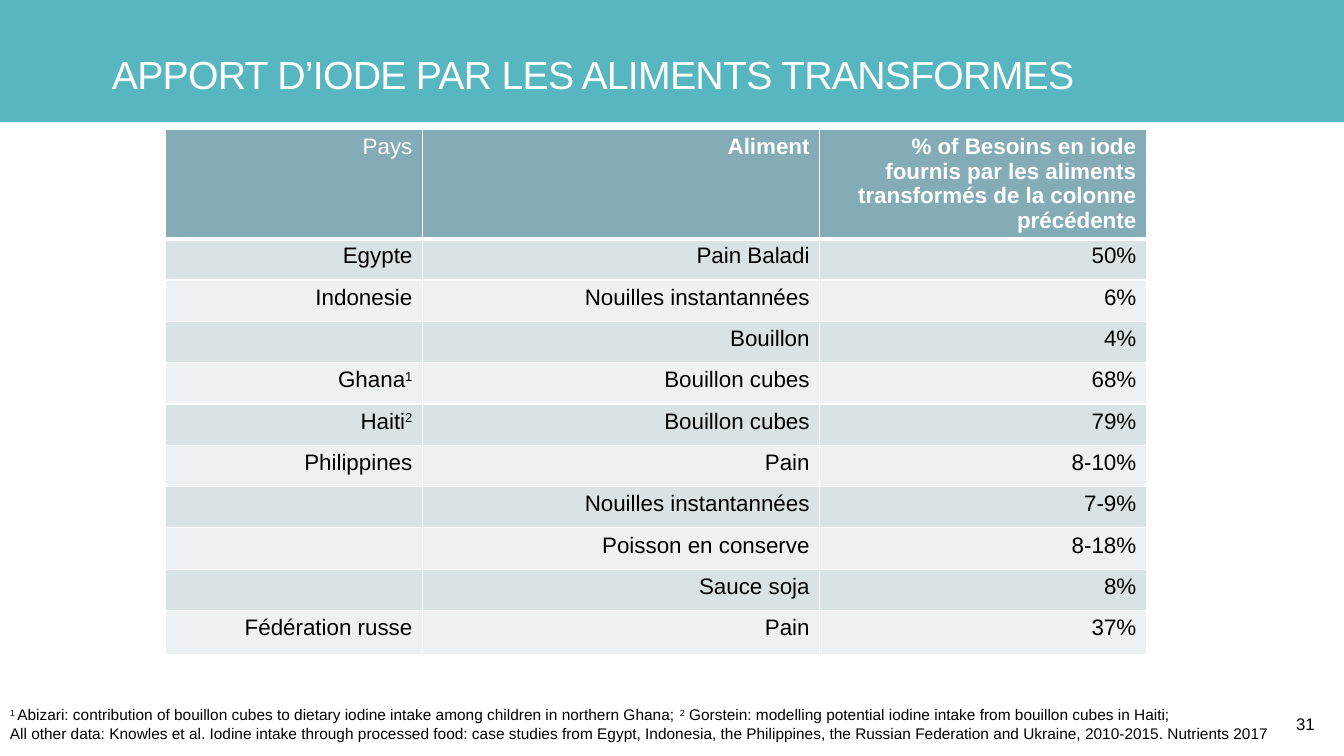
from lxml.etree import SubElement
from pptx import Presentation
from pptx.dml.color import RGBColor
from pptx.enum.shapes import MSO_SHAPE as Preset
from pptx.enum.text import MSO_ANCHOR as Anchor, PP_ALIGN as Align
from pptx.oxml.ns import qn
from pptx.util import Pt

PX = 9144  # EMU per px, 100 px to the inch
SLIDE_SIZE = (1333, 750)
FONT = "Arial"

WHITE = RGBColor(0xFF, 0xFF, 0xFF)
BLACK = RGBColor(0x00, 0x00, 0x00)
TEAL = RGBColor(0x58, 0xB6, 0xC0)
HEADER_FILL = RGBColor(0x84, 0xAC, 0xB6)
BAND_FILLS = (RGBColor(0xD9, 0xE3, 0xE5), RGBColor(0xED, 0xF1, 0xF3))

COLUMN_WIDTHS = (255, 394, 324)
HEADER_HEIGHT, ROW_HEIGHT, LAST_HEIGHT = 83, 41, 44

# Text between two ^ marks is superscript
ROWS = [
    ("Pays", "Aliment", "% of Besoins en iode fournis par les aliments "
     "transformés de la colonne précédente"),
    ("Egypte", "Pain Baladi", "50%"),
    ("Indonesie", "Nouilles instantannées", "6%"),
    ("", "Bouillon", "4%"),
    ("Ghana^1^", "Bouillon cubes", "68%"),
    ("Haiti^2^", "Bouillon cubes", "79%"),
    ("Philippines", "Pain", "8-10%"),
    ("", "Nouilles instantannées", "7-9%"),
    ("", "Poisson en conserve", "8-18%"),
    ("", "Sauce soja", "8%"),
    ("Fédération russe", "Pain", "37%"),
]
SOURCES = [
    "^1 ^Abizari: contribution of bouillon cubes to dietary iodine intake among "
    "children in northern Ghana; ^2^ Gorstein: modelling potential iodine intake "
    "from bouillon cubes in Haiti;",
    "All other data: Knowles et al. Iodine intake through processed food: case "
    "studies from Egypt, Indonesia, the Philippines, the Russian Federation and "
    "Ukraine, 2010-2015. Nutrients 2017",
]


def emu(*lengths):
    return [length * PX for length in lengths]


def write_text(frame, lines, size, color=BLACK, bold=False, align=Align.LEFT,
               spacing=None):
    for index, line in enumerate(lines):
        paragraph = frame.add_paragraph() if index else frame.paragraphs[0]
        paragraph.alignment = align
        for part, text in enumerate(line.split("^")):
            if not text:
                continue
            run = paragraph.add_run()
            run.text = text
            run.font.name = FONT
            run.font.size = Pt(size)
            run.font.bold = bold
            run.font.color.rgb = color
            properties = run._r.get_or_add_rPr()
            if part % 2:
                properties.set("baseline", "30000")
            if spacing is not None:
                properties.set("spc", str(round(spacing * 100)))


def set_margins(frame, margin):
    frame.margin_left = frame.margin_right = margin * PX
    frame.margin_top = frame.margin_bottom = margin * PX


def set_borders(cell, bottom_width):
    properties = cell._tc.get_or_add_tcPr()
    for side, width in (("L", 1), ("R", 1), ("T", 1), ("B", bottom_width)):
        line = SubElement(properties, qn(f"a:ln{side}"), w=str(Pt(width)))
        fill = SubElement(line, qn("a:solidFill"))
        SubElement(fill, qn("a:srgbClr"), val=str(WHITE))


def add_title_band(slide, left, top, width, height):
    band = slide.shapes.add_shape(Preset.RECTANGLE, *emu(left, top, width, height))
    band.shadow.inherit = False
    band.fill.solid()
    band.fill.fore_color.rgb = TEAL
    band.line.fill.background()

    # The title lies over the band
    title = slide.shapes.title
    slide.shapes._spTree.append(title._element)
    title.left, title.top, title.width, title.height = emu(
        left + 111, top + 6, 1102, 91)
    frame = title.text_frame
    set_margins(frame, 0)
    frame.word_wrap = True
    frame.vertical_anchor = Anchor.BOTTOM
    write_text(frame, ["APPORT D’IODE PAR LES ALIMENTS TRANSFORMES"], 28,
               color=WHITE, spacing=-0.5)


def add_food_table(slide, left, top):
    heights = [HEADER_HEIGHT] + [ROW_HEIGHT] * (len(ROWS) - 2) + [LAST_HEIGHT]
    table = slide.shapes.add_table(
        len(ROWS), len(COLUMN_WIDTHS),
        *emu(left, top, sum(COLUMN_WIDTHS), sum(heights))).table
    table.first_row = table.horz_banding = False
    for column, width in zip(table.columns, COLUMN_WIDTHS):
        column.width = width * PX
    for row_index, (values, height) in enumerate(zip(ROWS, heights)):
        table.rows[row_index].height = height * PX
        header = row_index == 0
        for column_index, value in enumerate(values):
            cell = table.cell(row_index, column_index)
            set_borders(cell, 3 if header else 1)
            cell.fill.solid()
            cell.fill.fore_color.rgb = (
                HEADER_FILL if header else BAND_FILLS[(row_index - 1) % 2])
            write_text(cell.text_frame, [value], 16, align=Align.RIGHT,
                       color=WHITE if header else BLACK,
                       bold=header and column_index > 0)


def add_footer(slide, left, top, width, height):
    sources = slide.shapes.add_textbox(*emu(left, top, width, height))
    sources.text_frame.word_wrap = True
    write_text(sources.text_frame, SOURCES, 11)

    number = slide.shapes.add_textbox(*emu(left + 1280, top + 8, 29, 30))
    number.text_frame.word_wrap = False
    number.text_frame.vertical_anchor = Anchor.MIDDLE
    set_margins(number.text_frame, 5)
    write_text(number.text_frame, ["31"], 12, align=Align.RIGHT)


def main():
    presentation = Presentation()
    presentation.slide_width, presentation.slide_height = emu(*SLIDE_SIZE)
    slide = presentation.slides.add_slide(presentation.slide_layouts[5])
    add_title_band(slide, 0, 0, SLIDE_SIZE[0], 121)
    add_food_table(slide, 164, 128)
    add_footer(slide, 0, 695, SLIDE_SIZE[0], 47)
    presentation.save("out.pptx")


if __name__ == "__main__":
    main()
